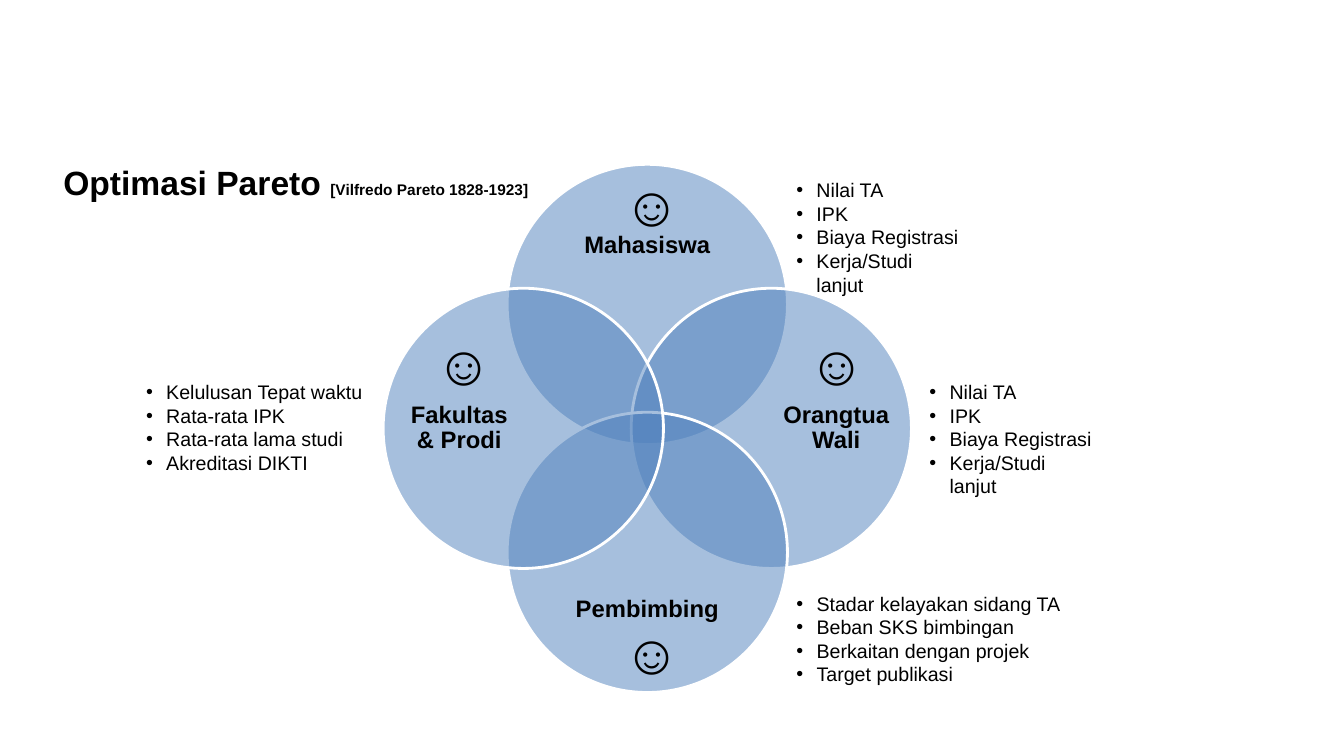
from dataclasses import dataclass

from lxml.etree import SubElement
from pptx import Presentation
from pptx.dml.color import RGBColor as RGB
from pptx.enum.shapes import MSO_SHAPE as SHAPE
from pptx.enum.text import MSO_ANCHOR as ANCHOR, MSO_AUTO_SIZE as FIT, PP_ALIGN as ALIGN
from pptx.oxml.ns import qn
from pptx.util import Inches, Pt


@dataclass(frozen=True)
class Theme:
    font: str = "Arial"
    ink: RGB = RGB(0, 0, 0)
    circle: RGB = RGB(0x4F, 0x81, 0xBD)
    outline: RGB = RGB(0xFF, 0xFF, 0xFF)
    opacity: int = 50
    title: int = 24
    note: int = 11
    label: int = 17
    face: int = 40
    item: int = 14


class VennSlide:
    def __init__(self, prs, theme):
        self.theme = theme
        self.s = prs.slides.add_slide(prs.slide_layouts[6])

    def style(self, r, size, bold=False):
        r.font.name, r.font.size, r.font.bold = self.theme.font, Pt(size), bold
        r.font.color.rgb = self.theme.ink

    def box(self, at, wrap=True, anchor=ANCHOR.TOP, inset=None):
        tf = self.s.shapes.add_textbox(*map(Inches, at)).text_frame
        tf.word_wrap, tf.vertical_anchor = wrap, anchor
        tf.auto_size = FIT.NONE if wrap else FIT.SHAPE_TO_FIT_TEXT
        if inset is not None:
            tf.margin_left = tf.margin_right = Inches(inset)
            tf.margin_top = tf.margin_bottom = Inches(inset)
        return tf

    def title(self, at, text, note):
        p = self.box(at, anchor=ANCHOR.MIDDLE, inset=0.1).paragraphs[0]
        for part, size in ((text, self.theme.title), (note, self.theme.note)):
            r = p.add_run()
            r.text = part
            self.style(r, size, bold=True)

    def circle(self, left, top, size):
        sp = self.s.shapes.add_shape(SHAPE.OVAL, *map(Inches, (left, top, size, size)))
        sp.shadow.inherit = False
        sp.fill.solid()
        sp.fill.fore_color.rgb = self.theme.circle
        color = sp.fill._xPr.find(qn("a:solidFill"))[0]
        SubElement(color, qn("a:alpha"), val=str(self.theme.opacity * 1000))
        sp.line.color.rgb = self.theme.outline
        sp.line.width = Pt(2)

    def label(self, at, text):
        p = self.box(at, anchor=ANCHOR.MIDDLE, inset=0).paragraphs[0]
        p.text, p.alignment, p.line_spacing = text, ALIGN.CENTER, 0.9
        self.style(p.runs[0], self.theme.label, bold=True)

    def face(self, left, top):
        p = self.box((left, top, 0.68, 0.77), wrap=False).paragraphs[0]
        p.text = "☺"
        self.style(p.runs[0], self.theme.face)

    def bullets(self, at, items):
        tf = self.box(at, wrap=False)
        tf.text = "\n".join(items)
        for p in tf.paragraphs:
            pPr = p._p.get_or_add_pPr()
            pPr.set("marL", str(Inches(0.2)))
            pPr.set("indent", str(-Inches(0.2)))
            SubElement(pPr, qn("a:buFont"), typeface=self.theme.font)
            SubElement(pPr, qn("a:buChar"), char="•")
            self.style(p.runs[0], self.theme.item)


# Circles sit one step away from the centre of the diagram
CENTER_X, CENTER_Y, STEP, SIZE = 6.42, 4.25, 1.23, 2.78
STUDENT_GOALS = ["Nilai TA", "IPK", "Biaya Registrasi", "Kerja/Studi lanjut"]

# Name, direction, label box, face position, goals box, goals
PARTIES = [
    ("Mahasiswa", (0, -1), (5.35, 2, 2.14, 0.88), (6.09, 1.64),
     (7.8, 1.72, 1.87, 1.04), STUDENT_GOALS),
    ("Orangtua Wali", (1, 0), (7.76, 3.18, 1.07, 2.14), (7.92, 3.22),
     (9.12, 3.72, 1.87, 1.04), STUDENT_GOALS),
    ("Pembimbing", (0, 1), (5.35, 5.61, 2.14, 0.88), (6.09, 6.09),
     (7.8, 5.82, 2.85, 1.04),
     ["Stadar kelayakan sidang TA", "Beban SKS bimbingan",
      "Berkaitan dengan projek", "Target publikasi"]),
    ("Fakultas & Prodi", (-1, 0), (4.02, 3.18, 1.07, 2.14), (4.22, 3.22),
     (1.35, 3.72, 2.38, 1.04),
     ["Kelulusan Tepat waktu", "Rata-rata IPK",
      "Rata-rata lama studi", "Akreditasi DIKTI"]),
]


def main():
    prs = Presentation()
    prs.slide_width, prs.slide_height = Inches(13.33), Inches(7.5)
    venn = VennSlide(prs, Theme())

    # Overlapping circles with their names
    for name, (dx, dy), label_at, _, _, _ in PARTIES:
        venn.circle(CENTER_X + dx * STEP - SIZE / 2, CENTER_Y + dy * STEP - SIZE / 2, SIZE)
        venn.label(label_at, name)

    # Faces and goals of each party
    for _, _, _, face_at, goals_at, goals in PARTIES:
        venn.face(*face_at)
        venn.bullets(goals_at, goals)

    # Title
    venn.title((0.53, 1.46, 12.14, 0.7), "Optimasi Pareto ", "[Vilfredo Pareto 1828-1923]")

    prs.save("out.pptx")


if __name__ == "__main__":
    main()
